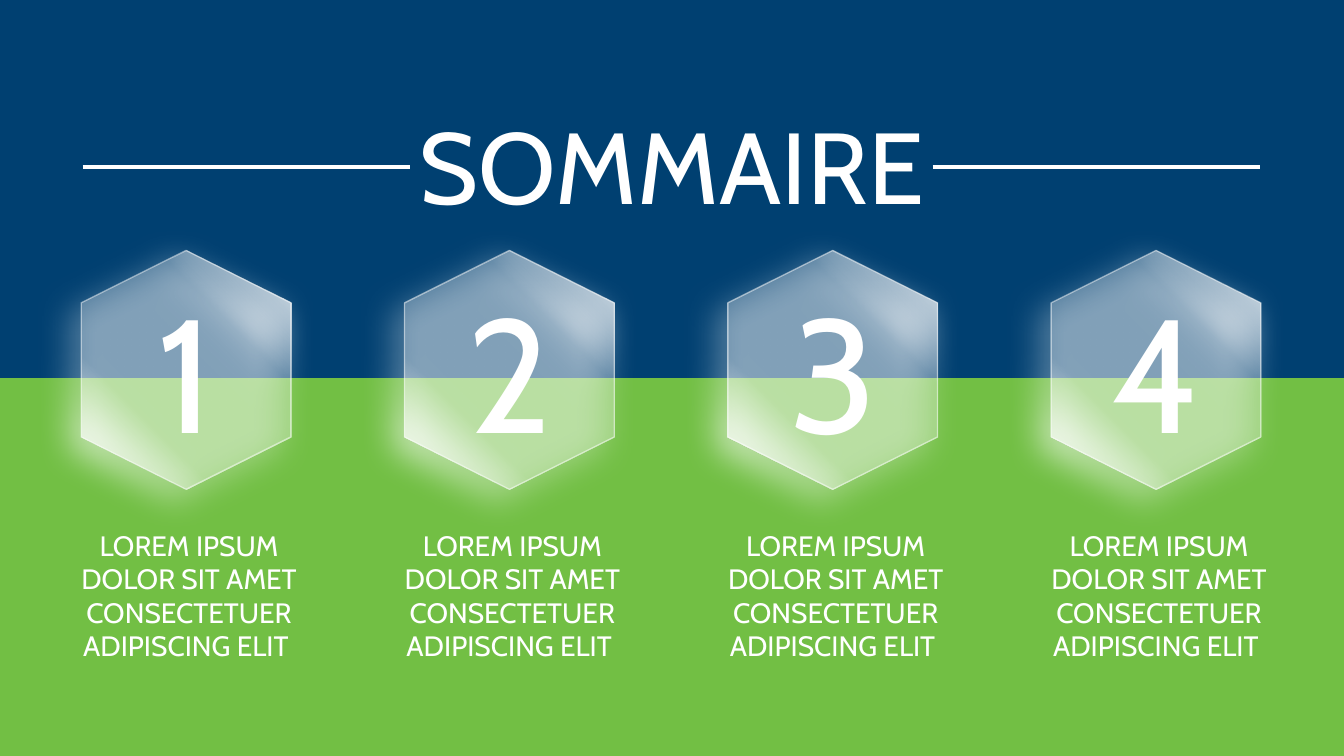
from lxml import etree
from pptx import Presentation
from pptx.dml.color import RGBColor
from pptx.enum.shapes import MSO_CONNECTOR, MSO_SHAPE
from pptx.enum.text import MSO_AUTO_SIZE, PP_ALIGN
from pptx.oxml import parse_xml
from pptx.oxml.ns import nsdecls, qn
from pptx.util import Inches, Pt

RECTANGLE = MSO_SHAPE.RECTANGLE
HEXAGON = MSO_SHAPE.HEXAGON
STRAIGHT = MSO_CONNECTOR.STRAIGHT
GROW = MSO_AUTO_SIZE.SHAPE_TO_FIT_TEXT
CENTER = PP_ALIGN.CENTER

COLORS = {"blue": "004071", "green": "72BF44", "white": "FFFFFF"}
WIDTH, HEIGHT = 13.33, 7.5
COLUMNS = 4
FIRST_LEFT, LAST_LEFT = 0.33, 9.95
PITCH = (LAST_LEFT - FIRST_LEFT) / (COLUMNS - 1)
CAPTION = "LOREM IPSUM\vDOLOR SIT AMET CONSECTETUER ADIPISCING ELIT "
GLASS_STOPS = [(0, 100), (30, 30), (70, 30), (100, 100)]


def color_xml(alpha):
    return f'<a:srgbClr val="{COLORS["white"]}"><a:alpha val="{alpha * 1000}"/></a:srgbClr>'


def add_text(shapes, text, size, *bounds):
    box = shapes.add_textbox(*map(Inches, bounds))
    frame = box.text_frame
    frame.word_wrap = True
    frame.auto_size = GROW
    para = frame.paragraphs[0]
    para.text = text
    para.alignment = CENTER
    for span in para.runs:
        for name, value in {"name": "Cabin", "size": Pt(size)}.items():
            setattr(span.font, name, value)
        span.font.color.rgb = RGBColor.from_string(COLORS["white"])


deck = Presentation()
deck.slide_width = Inches(WIDTH)
deck.slide_height = Inches(HEIGHT)
page = deck.slides.add_slide(deck.slide_layouts[6])

for color, top, height in [("blue", 0, 4.58), ("green", HEIGHT / 2, HEIGHT / 2)]:
    band = page.shapes.add_shape(RECTANGLE, 0, Inches(top), Inches(WIDTH), Inches(height))
    band.shadow.inherit = False
    band.fill.solid()
    band.fill.fore_color.rgb = RGBColor.from_string(COLORS[color])
    band.line.fill.background()

stops = "".join(
    f'<a:gs pos="{position * 1000}">{color_xml(alpha)}</a:gs>' for position, alpha in GLASS_STOPS
)
glass_parts = [
    f'<a:gradFill {nsdecls("a")} rotWithShape="1"><a:gsLst>{stops}</a:gsLst>'
    '<a:lin ang="2700000" scaled="0"/></a:gradFill>',
    f'<a:ln {nsdecls("a")} w="12700"><a:solidFill>{color_xml(50)}</a:solidFill></a:ln>',
    f'<a:effectLst {nsdecls("a")}><a:outerShdw blurRad="{Pt(24)}" dist="{Pt(11)}" '
    f'dir="8100000" algn="tr" rotWithShape="0">{color_xml(100)}</a:outerShdw></a:effectLst>',
]

for column in reversed(range(COLUMNS)):
    left = FIRST_LEFT + column * PITCH
    item = page.shapes.add_group_shape().shapes
    add_text(item, CAPTION, 20, left, 5.19, 3.09, 1.45)
    glass = item.add_shape(
        HEXAGON, Inches(left + 0.33), Inches(2.63), Inches(2.37), Inches(2.08)
    )
    glass.rotation = 90
    for part in glass_parts:
        glass.element.spPr.append(parse_xml(part))
    add_text(item, str(column + 1), 115, left + 0.34, 2.65, 2.36, 2.04)

for start in (9.25, 0.82):
    rule = page.shapes.add_connector(
        STRAIGHT, Inches(start), Inches(1.66), Inches(start + 3.25), Inches(1.66)
    )
    rule.line.color.rgb = RGBColor.from_string(COLORS["white"])
    rule.line.width = Pt(3)
    etree.SubElement(rule.element.spPr, qn("a:effectLst"))

add_text(page.shapes, "SOMMAIRE", 72, 0, 0.98, WIDTH, 1.31)

deck.save("out.pptx")
